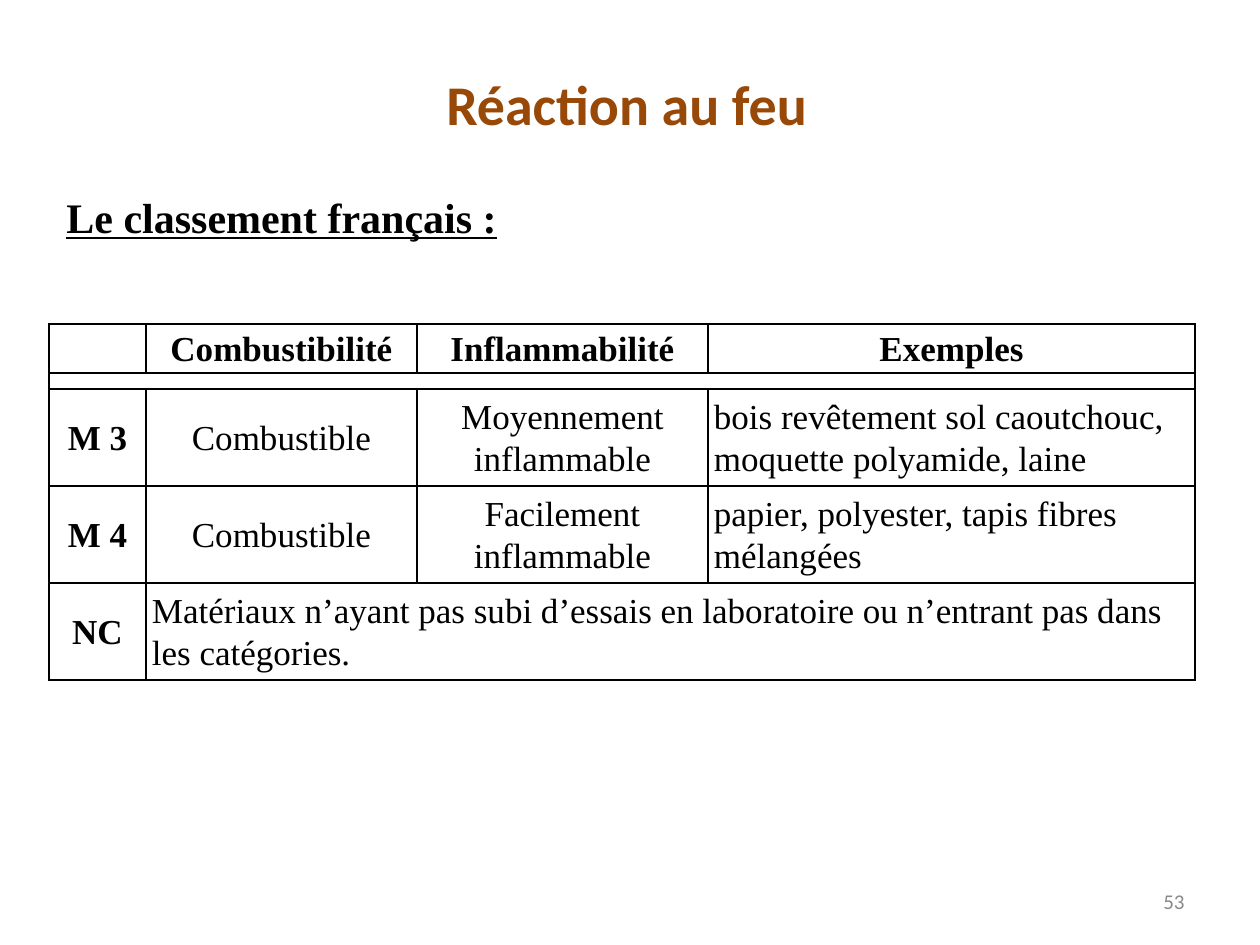
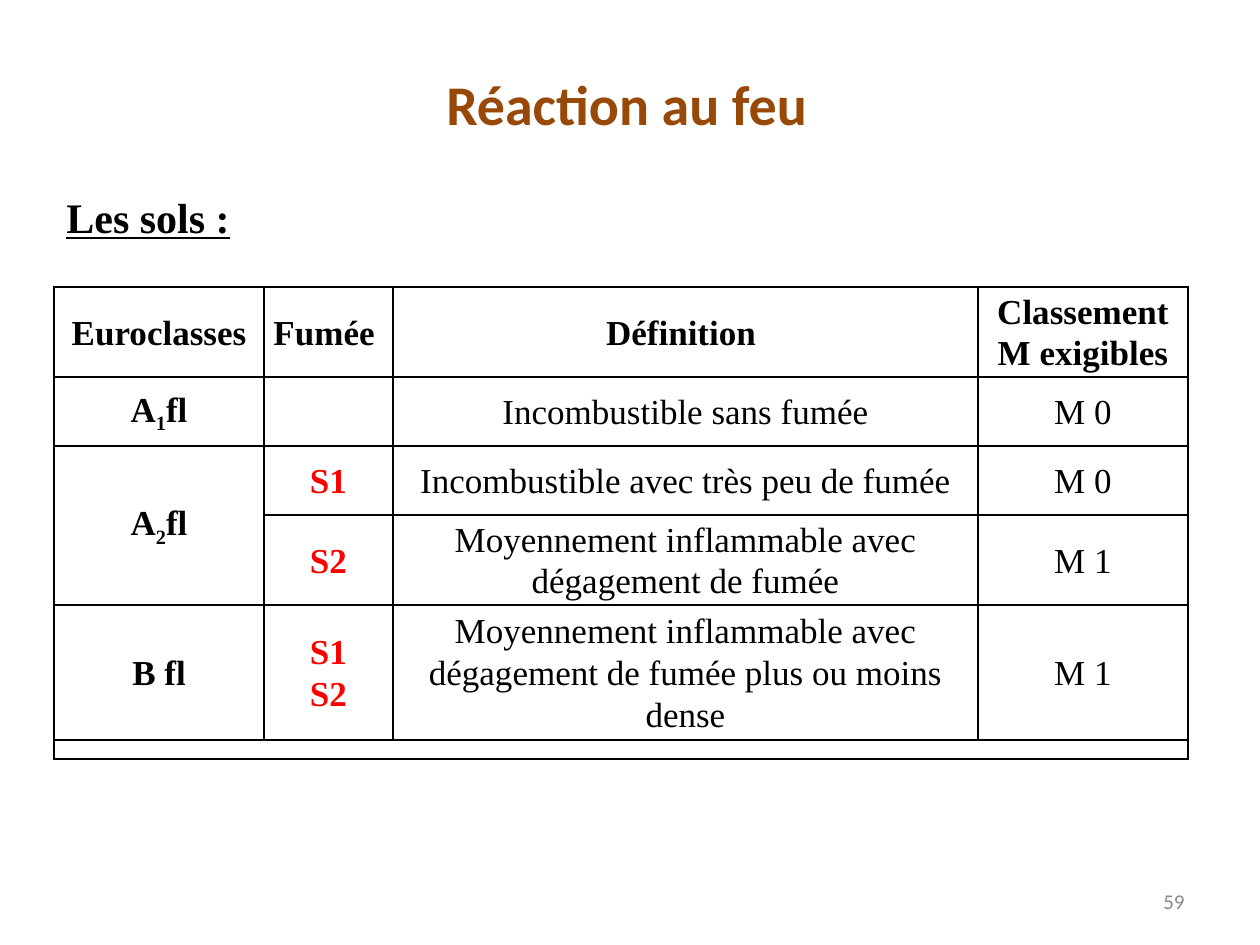
import pptx
import pptx.dml.color
import pptx.enum.text
import pptx.oxml
import pptx.oxml.ns
import pptx.util

ALIGN = pptx.enum.text.PP_ALIGN
MIDDLE = pptx.enum.text.MSO_ANCHOR.MIDDLE
TOP = pptx.enum.text.MSO_ANCHOR.TOP

COLORS = {"title": "984807", "text": "000000", "smoke": "FF0000",
          "number": "898989", "border": "000000"}
HEADING_FONT = "Calibri"
BODY_FONT = "Times New Roman"
SLIDE_SIZE = (1260, 945)
TITLE = "Réaction au feu"
TITLE_BOX = (34, 38, 1186, 130)
NUMBER_BOX = (903, 876, 294, 50)

# In cells, "|" encloses a subscript and "\v" breaks a line.
# Merges are (first row, first column, last row, last column).
SLIDES = [
    {
        "number": "53",
        "subtitle": "Le classement français :",
        "subtitle_box": (54, 185, 525, 64),
        "table_origin": (49, 324),
        "columns": [97, 271, 291, 487],
        "heights": [49, 16, 97, 97, 97],
        "margin": 6,
        "rows": [
            ["", "Combustibilité", "Inflammabilité", "Exemples"],
            ["", "", "", ""],
            ["M 3", "Combustible", "Moyennement inflammable",
             "bois revêtement sol caoutchouc, moquette polyamide, laine"],
            ["M 4", "Combustible", "Facilement inflammable",
             "papier, polyester, tapis fibres mélangées"],
            ["NC", "Matériaux n’ayant pas subi d’essais en laboratoire ou "
             "n’entrant pas dans les catégories.", "", ""],
        ],
        "merges": [(1, 0, 1, 3), (4, 1, 4, 3)],
        "left_cells": [(2, 3), (3, 3), (4, 1)],
        "smoke_column": None,
    },
    {
        "number": "59",
        "subtitle": "Les sols :",
        "subtitle_box": (54, 185, 194, 64),
        "table_origin": (54, 287),
        "columns": [210, 129, 585, 210],
        "heights": [89, 69, 69, 89, 135, 19],
        "margin": 9,
        "rows": [
            ["Euroclasses", "Fumée ", "Définition ", "Classement M exigibles"],
            ["A|1|fl", "", "Incombustible sans fumée", "M 0"],
            ["A|2|fl", "S1", "Incombustible avec très peu de fumée", "M 0"],
            ["", "S2", "Moyennement inflammable avec dégagement de fumée", "M 1"],
            ["B fl", "S1\vS2", "Moyennement inflammable avec dégagement de fumée "
             "plus ou moins dense", "M 1"],
            ["", "", "", ""],
        ],
        "merges": [(2, 0, 3, 0), (5, 0, 5, 3)],
        "left_cells": [],
        "smoke_column": 1,
    },
]


def px(length):
    return pptx.util.Emu(round(length * 914400 / 126))


def set_font(paragraph, name, size, color, bold=False, underline=False):
    font = paragraph.font
    font.name = name
    font.size = pptx.util.Pt(size)
    font.bold = bold
    font.underline = underline
    font.color.rgb = pptx.dml.color.RGBColor.from_string(COLORS[color])


def add_text(slide, box, text, align, anchor, *font, **style):
    frame = slide.shapes.add_textbox(*map(px, box)).text_frame
    frame.word_wrap = True
    frame.vertical_anchor = anchor
    paragraph = frame.paragraphs[0]
    paragraph.text = text
    paragraph.alignment = align
    set_font(paragraph, *font, **style)


def add_borders(cell):
    properties = cell._tc.get_or_add_tcPr()
    for side in "LRTB":
        properties.append(pptx.oxml.parse_xml(
            f'<a:ln{side} {pptx.oxml.ns.nsdecls("a")} w="12700"><a:solidFill>'
            f'<a:srgbClr val="{COLORS["border"]}"/></a:solidFill></a:ln{side}>'))


def fill_cell(cell, text, margin, align, color, bold):
    add_borders(cell)
    cell.fill.background()
    cell.vertical_anchor = MIDDLE
    cell.margin_left = cell.margin_right = px(margin)
    cell.margin_top = cell.margin_bottom = 0
    paragraph = cell.text_frame.paragraphs[0]
    if not text:
        # A tiny end mark lets the narrow rows keep their height.
        paragraph._p.get_or_add_endParaRPr().set("sz", "100")
        return
    first, *others = text.split("|")
    paragraph.text = first
    for index, part in enumerate(others):
        run = paragraph.add_run()
        run.text = part
        if index % 2 == 0:
            run._r.get_or_add_rPr().set("baseline", "-25000")
    paragraph.alignment = align
    paragraph.line_spacing = 1.07
    set_font(paragraph, BODY_FONT, 20, color, bold)


def add_class_table(slide, content):
    columns, heights = content["columns"], content["heights"]
    table = slide.shapes.add_table(
        len(heights), len(columns), *map(px, content["table_origin"]),
        px(sum(columns)), px(sum(heights))).table
    table.first_row = table.horz_banding = False
    for column, width in zip(table.columns, columns):
        column.width = px(width)
    for row, height in zip(table.rows, heights):
        row.height = px(height)
    for i, texts in enumerate(content["rows"]):
        for j, text in enumerate(texts):
            smoke = i > 0 and j == content["smoke_column"]
            left = (i, j) in content["left_cells"]
            fill_cell(table.cell(i, j), text, content["margin"],
                      ALIGN.LEFT if left else ALIGN.CENTER,
                      "smoke" if smoke else "text",
                      bold=i == 0 or j == 0 or smoke)
    for top, left, bottom, right in content["merges"]:
        table.cell(top, left).merge(table.cell(bottom, right))


def main():
    presentation = pptx.Presentation()
    presentation.slide_width, presentation.slide_height = map(px, SLIDE_SIZE)
    for content in SLIDES:
        slide = presentation.slides.add_slide(presentation.slide_layouts[6])
        add_text(slide, NUMBER_BOX, content["number"], ALIGN.RIGHT, MIDDLE,
                 HEADING_FONT, 12, "number")
        add_text(slide, TITLE_BOX, TITLE, ALIGN.CENTER, MIDDLE,
                 HEADING_FONT, 32, "title", bold=True)
        add_text(slide, content["subtitle_box"], content["subtitle"], ALIGN.LEFT, TOP,
                 BODY_FONT, 24, "text", bold=True, underline=True)
        add_class_table(slide, content)
    presentation.save("out.pptx")


if __name__ == "__main__":
    main()
